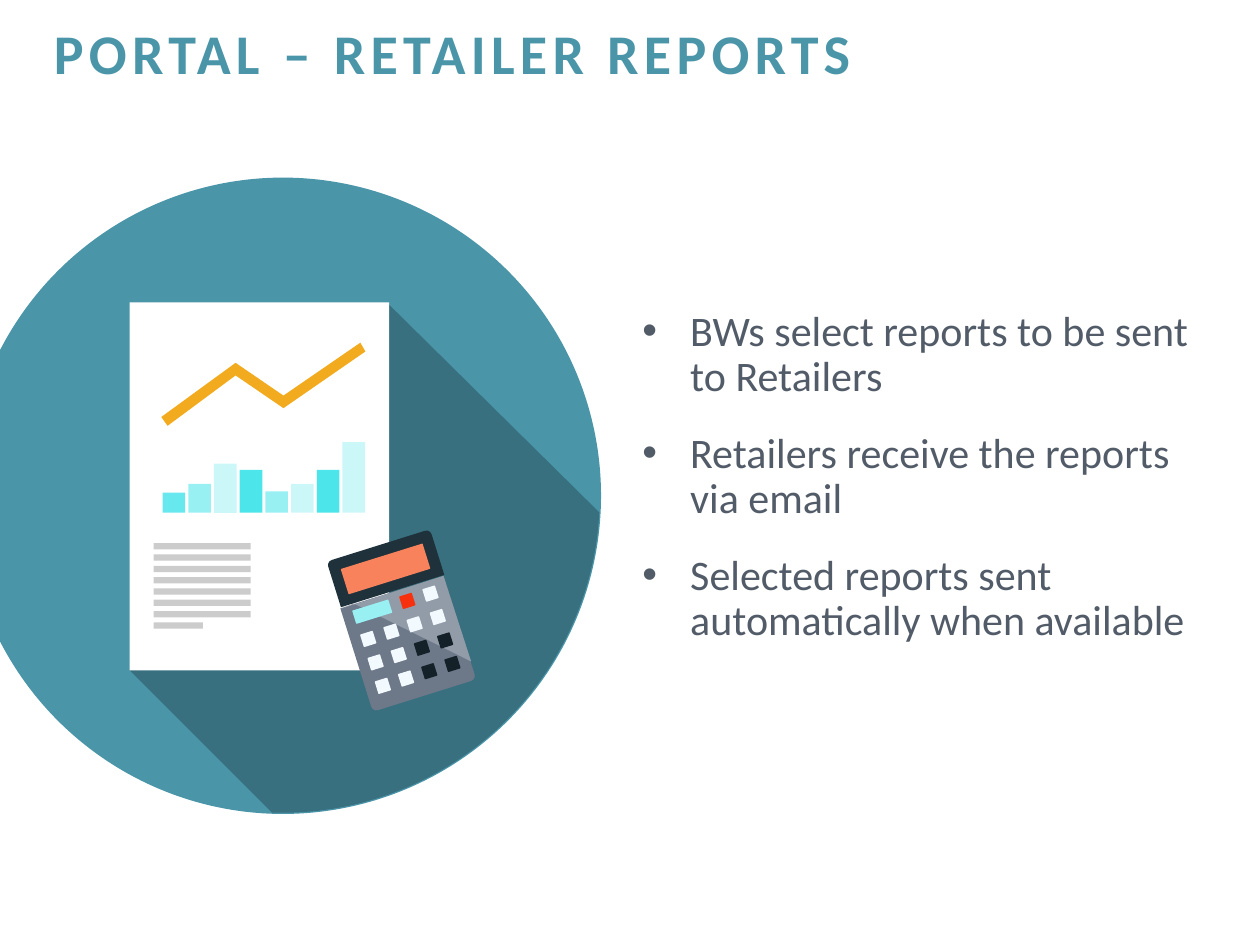
import math

from lxml import etree
from pptx import Presentation
from pptx import util as u
from pptx.dml.color import RGBColor
from pptx.enum import shapes, text
from pptx.oxml.ns import qn

THEME = {
    "font": "Calibri", "title_size": 32, "body_size": 24,
    "teal": "4B95A9", "shade": "38707F", "body": "525B68",
    "paper": "FFFFFF", "rule": "CCCCCC", "trend": "F2AB1E",
    "aqua1": "CCF7F9", "aqua2": "99F0F3", "aqua3": "66E8EE", "aqua4": "4CE6EA",
    "case": "6D7889", "gloss": "929CA9", "cap": "1F323C", "screen": "F8825B",
    "red": "F7310D", "key": "F2F9FF", "dark_key": "142128",
}
COLUMNS, ROWS = 10, 7.5
TILT = -17.4

prs = Presentation()
prs.slide_width, prs.slide_height = u.Inches(10), u.Inches(7.5)
cell = prs.slide_width // COLUMNS
slide = prs.slides.add_slide(prs.slide_layouts[6])


def add_block(kind, x, y, width, height, color, turn=0, corner=None):
    """Place a flat preset shape by its centre, in grid cells."""
    block = slide.shapes.add_shape(
        kind, *(round(v * cell) for v in (x - width / 2, y - height / 2, width, height)))
    block.shadow.inherit = False
    block.fill.solid()
    block.fill.fore_color.rgb = RGBColor.from_string(THEME[color])
    block.line.fill.background()
    block.rotation = turn
    if corner is not None:
        block.adjustments[0] = corner


def add_outline(points, color):
    """Draw a closed flat polygon through points given in grid cells."""
    corners = [(round(x * cell), round(y * cell)) for x, y in points]
    builder = slide.shapes.build_freeform(*corners[0])
    builder.add_line_segments(corners[1:], close=True)
    outline = builder.convert_to_shape()
    outline.shadow.inherit = False
    outline.fill.solid()
    outline.fill.fore_color.rgb = RGBColor.from_string(THEME[color])
    outline.line.fill.background()


RECT = shapes.MSO_SHAPE.RECTANGLE
ROUNDED = shapes.MSO_SHAPE.ROUNDED_RECTANGLE
ROUND_TOP = shapes.MSO_SHAPE.ROUND_2_SAME_RECTANGLE

# Disc and the long shadow that ends on its rim
disc_x, disc_y, radius = 2.245, 3.935, 2.525
add_block(shapes.MSO_SHAPE.OVAL, disc_x, disc_y, 2 * radius, 2 * radius, "teal")
rim = [(disc_x + (radius - 0.01) * math.cos(math.radians(angle)),
        disc_y + (radius - 0.01) * math.sin(math.radians(angle)))
       for angle in range(3, 93)]
add_outline([(3.07, 2.4), *rim, (1.03, 5.32)], "shade")

# Report page
add_block(RECT, 2.06, 3.86, 2.06, 2.92, "paper")
bars = [(0.16, "aqua3"), (0.23, "aqua2"), (0.39, "aqua1"), (0.34, "aqua4"),
        (0.17, "aqua2"), (0.23, "aqua1"), (0.34, "aqua4"), (0.56, "aqua1")]
for i, (height, color) in enumerate(bars):
    add_block(RECT, 1.38 + i * 0.204, 4.07 - height / 2, 0.18, height, color)
for i in range(8):
    width = 0.77 if i < 7 else 0.39
    add_block(RECT, 1.22 + width / 2, 4.335 + i * 0.09, width, 0.05, "rule")
add_outline([(1.33, 3.38), (1.28, 3.31), (1.87, 2.88), (2.25, 3.14),
             (2.86, 2.72), (2.9, 2.79), (2.25, 3.24), (1.87, 2.98)], "trend")

# Calculator
add_block(ROUND_TOP, 3.24, 5.11, 0.86, 0.86, "case", TILT + 180, 0.05)
add_outline([(3.52, 4.57), (2.71, 4.83), (2.81, 4.79), (3.74, 5.25)], "gloss")
add_block(ROUND_TOP, 3.06, 4.51, 0.86, 0.38, "cap", TILT, 0.11)
add_block(ROUNDED, 3.06, 4.515, 0.68, 0.21, "screen", TILT, 0.03)
add_block(ROUNDED, 2.955, 4.855, 0.3, 0.11, "aqua2", TILT, 0.05)
key_rows = [
    [None, None, "red", "key"],
    ["key"] * 4,
    ["key", "key", "dark_key", "dark_key"],
    ["key", "key", "dark_key", "dark_key"],
]
for row, keys in enumerate(key_rows):
    for column, color in enumerate(keys):
        if color:
            add_block(ROUNDED, 2.865 + column * 0.184 + row * 0.058,
                      4.885 - column * 0.058 + row * 0.186,
                      0.105, 0.105, color, TILT, 0.07)

# Title and list
copy_blocks = [
    ((0.33, 0.2, 9.63, 0.95), ["PORTAL – RETAILER REPORTS"], "title_size", "teal"),
    ((5, 2.41, 4.8, 3.49),
     ["BWs select reports to be sent to Retailers",
      "Retailers receive the reports via email",
      "Selected reports sent automatically when available"], "body_size", "body"),
]
for place, lines, size, color in copy_blocks:
    is_title = size == "title_size"
    frame = slide.shapes.add_textbox(*(round(v * cell) for v in place)).text_frame
    frame.word_wrap = True
    frame.vertical_anchor = text.MSO_ANCHOR.TOP
    frame.text = "\n".join(lines)
    for paragraph in frame.paragraphs:
        paragraph.line_spacing = 0.8 if is_title else 0.9
        font = paragraph.runs[0].font
        font.name, font.size, font.bold = THEME["font"], u.Pt(THEME[size]), is_title
        font.color.rgb = RGBColor.from_string(THEME[color])
        if is_title:
            paragraph.runs[0]._r.get_or_add_rPr().set("spc", "300")
        else:
            paragraph.space_before = u.Pt(18)
            properties = paragraph._p.get_or_add_pPr()
            indent = round(0.38 * cell)
            properties.set("marL", str(indent))
            properties.set("indent", str(-indent))
            etree.SubElement(properties, qn("a:buFont")).set("typeface", "Arial")
            etree.SubElement(properties, qn("a:buChar")).set("char", "•")

prs.save("out.pptx")
